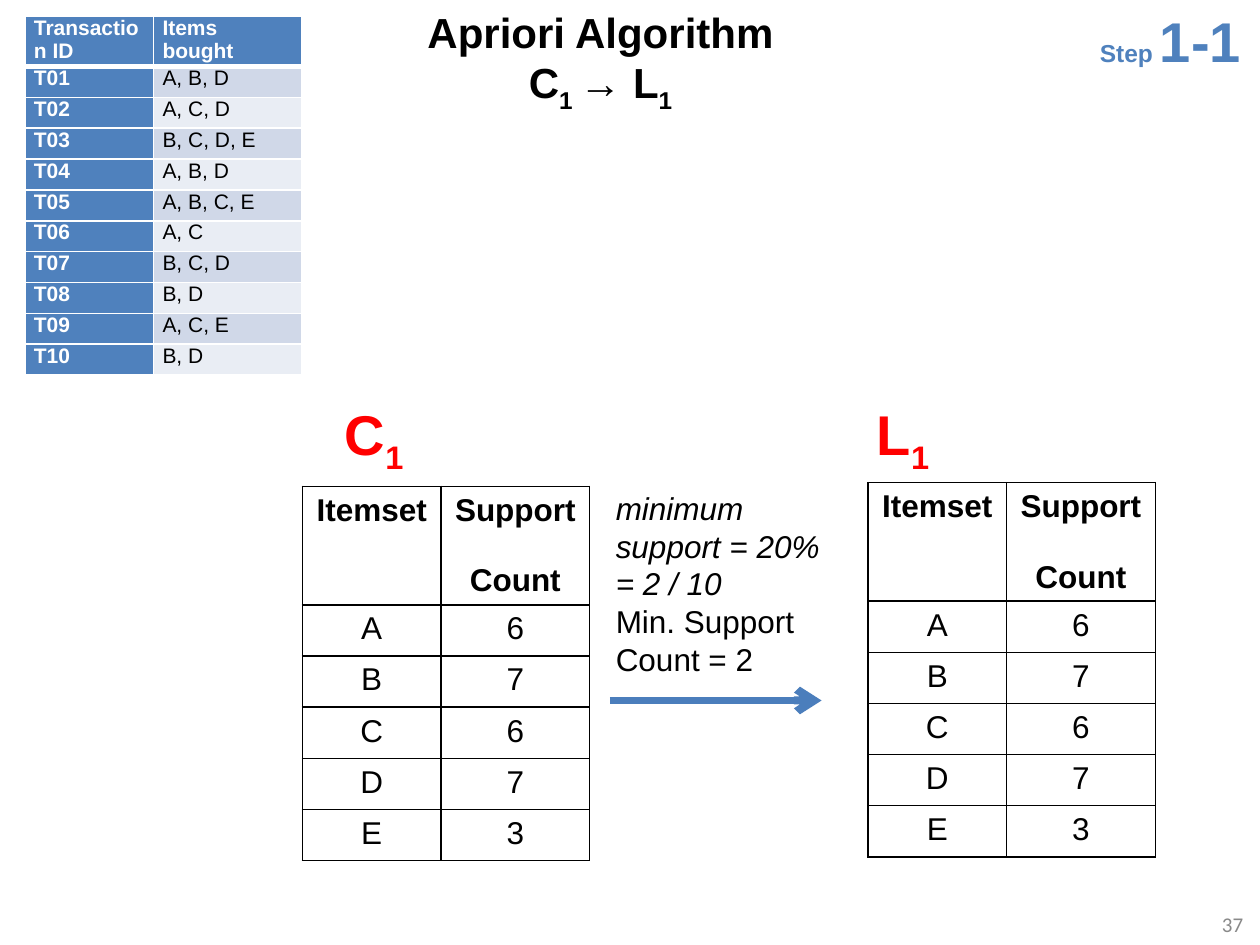
import pptx
import pptx.dml.color
import pptx.enum.shapes
import pptx.enum.text
import pptx.oxml
import pptx.oxml.ns
import pptx.util

Pt = pptx.util.Pt
ALIGN = pptx.enum.text.PP_ALIGN
ANCHOR = pptx.enum.text.MSO_ANCHOR
AUTO_SIZE = pptx.enum.text.MSO_AUTO_SIZE
BLUE, RED, BLACK, WHITE = "4F81BD", "FF0000", "000000", "FFFFFF"
BANDS = ["D0D8E8", "E9EDF4"]

TRANSACTIONS = ["A, B, D", "A, C, D", "B, C, D, E", "A, B, D", "A, B, C, E",
                "A, C", "B, C, D", "B, D", "A, C, E", "B, D"]
SUPPORT_COUNTS = {"A": 6, "B": 7, "C": 6, "D": 7, "E": 3}


def color(value):
    return pptx.dml.color.RGBColor.from_string(value)


def style_paragraph(paragraph, size, font_color, bold=False, align=ALIGN.LEFT, font="Arial"):
    paragraph.alignment = align
    paragraph.font.name = font
    paragraph.font.size = Pt(size)
    paragraph.font.bold = bold
    paragraph.font.color.rgb = color(font_color)


def add_run(paragraph, text, size=None, subscript=False):
    run = paragraph.add_run()
    run.text = text
    if size:
        run.font.size = Pt(size)
    if subscript:
        run._r.get_or_add_rPr().set("baseline", "-25000")


def add_text_frame(slide, box, wrap=False):
    shape = slide.shapes.add_textbox(*map(Pt, box))
    frame = shape.text_frame
    frame.word_wrap = wrap
    frame.auto_size = AUTO_SIZE.SHAPE_TO_FIT_TEXT
    return frame


def set_borders(cell, line_color, top=1, bottom=1):
    properties = cell._tc.get_or_add_tcPr()
    for side, width in (("L", 1), ("R", 1), ("T", top), ("B", bottom)):
        properties.append(pptx.oxml.parse_xml(
            f'<a:ln{side} {pptx.oxml.ns.nsdecls("a")} w="{Pt(width)}"><a:solidFill>'
            f'<a:srgbClr val="{line_color}"/></a:solidFill></a:ln{side}>'))


def add_plain_table(slide, box, rows, column_widths, header_height):
    """Add a filled-in table whose body rows share the height below the header."""
    frame = slide.shapes.add_table(len(rows), len(column_widths), *map(Pt, box))
    table = frame.table
    table.horz_banding = False
    for column, width in zip(table.columns, column_widths):
        column.width = Pt(width)
    body_height = (box[3] - header_height) / (len(rows) - 1)
    for index, (row, values) in enumerate(zip(table.rows, rows)):
        row.height = Pt(body_height if index else header_height)
        for cell, value in zip(row.cells, values):
            cell.text_frame.paragraphs[0].text = str(value)
    return table


def add_transaction_table(slide, box):
    rows = [("Transaction ID", "Items bought")]
    rows += [(f"T{number:02}", items) for number, items in enumerate(TRANSACTIONS, 1)]
    table = add_plain_table(slide, box, rows, [73.5, 85], 28.8)
    for row_index, row in enumerate(table.rows):
        for column_index, cell in enumerate(row.cells):
            heading = row_index == 0 or column_index == 0
            cell.margin_left = cell.margin_right = Pt(5.2)
            cell.margin_top = cell.margin_bottom = 0
            style_paragraph(cell.text_frame.paragraphs[0], 12,
                            WHITE if heading else BLACK, bold=heading)
            # The thick rule runs between the header and the first body row
            set_borders(cell, WHITE, top=3 if row_index == 1 else 1,
                        bottom=3 if row_index == 0 else 1)
            cell.fill.solid()
            cell.fill.fore_color.rgb = color(BLUE if heading else BANDS[(row_index - 1) % 2])


def add_itemset_table(slide, box):
    rows = [("Itemset", "Support \vCount"), *SUPPORT_COUNTS.items()]
    table = add_plain_table(slide, box, rows, [79.2, 85], 50.4)
    for row_index, row in enumerate(table.rows):
        for cell in row.cells:
            style_paragraph(cell.text_frame.paragraphs[0], 18, BLACK,
                            bold=row_index == 0, align=ALIGN.CENTER)
            set_borders(cell, BLACK)
            cell.fill.background()


def add_set_label(slide, box, letter):
    paragraph = add_text_frame(slide, box).paragraphs[0]
    style_paragraph(paragraph, 32, RED, bold=True)
    add_run(paragraph, letter)
    add_run(paragraph, "1", subscript=True)


def add_title(slide, box):
    frame = add_text_frame(slide, box, wrap=True)
    name, step = frame.paragraphs[0], frame.add_paragraph()
    for paragraph in (name, step):
        style_paragraph(paragraph, 24, BLACK, bold=True, align=ALIGN.CENTER)
    add_run(name, "Apriori Algorithm")
    for text, subscript in (("C", False), ("1 ", True), ("→ L", False), ("1", True)):
        add_run(step, text, subscript=subscript)


def add_step_marker(slide, box):
    paragraph = add_text_frame(slide, box).paragraphs[0]
    style_paragraph(paragraph, 14, BLUE, bold=True)
    add_run(paragraph, "Step ")
    add_run(paragraph, "1-1", size=32)


def add_support_note(slide, box):
    frame = add_text_frame(slide, box)
    lines = [("minimum \vsupport = 20%", True), ("= 2 / 10", True),
             ("Min. Support \vCount = 2", False)]
    for index, (text, italic) in enumerate(lines):
        paragraph = frame.add_paragraph() if index else frame.paragraphs[0]
        paragraph.text = text
        style_paragraph(paragraph, 18, BLACK)
        paragraph.font.italic = italic


def add_arrow(slide, left, right, y):
    connector = slide.shapes.add_connector(
        pptx.enum.shapes.MSO_CONNECTOR.STRAIGHT, Pt(left), Pt(y), Pt(right), Pt(y))
    connector.line.width = Pt(4.5)
    connector.line.color.rgb = color("4B7EBC")
    namespace = pptx.oxml.ns.nsdecls("a")
    connector.line._get_or_add_ln().append(
        pptx.oxml.parse_xml(f'<a:tailEnd {namespace} type="arrow"/>'))
    connector._element.spPr.append(pptx.oxml.parse_xml(f"<a:effectLst {namespace}/>"))


def add_page_number(slide, box):
    frame = add_text_frame(slide, box, wrap=True)
    frame.auto_size = AUTO_SIZE.NONE
    frame.vertical_anchor = ANCHOR.MIDDLE
    frame.text = "37"
    style_paragraph(frame.paragraphs[0], 12, "898989", align=ALIGN.RIGHT, font="Calibri")


def main():
    presentation = pptx.Presentation()
    presentation.slide_width, presentation.slide_height = Pt(720), Pt(540)
    slide = presentation.slides.add_slide(presentation.slide_layouts[6])

    # Source data and page number
    add_page_number(slide, (549.5, 513.4, 168, 28.8))
    add_transaction_table(slide, (14.2, 9.2, 158.5, 205.2))

    # Candidate itemsets and frequent itemsets
    add_itemset_table(slide, (172.8, 278, 164.2, 196.6))
    add_itemset_table(slide, (496, 275.8, 164.2, 196.6))
    add_set_label(slide, (190, 224.6, 49.7, 46), "C")
    add_set_label(slide, (494, 224.6, 46, 46), "L")

    # Pruning step between the two tables
    add_support_note(slide, (344.8, 275.8, 132.5, 116.6))
    add_arrow(slide, 348.5, 469.5, 400.3)

    # Heading
    add_title(slide, (224, 0, 238.3, 65.5))
    add_step_marker(slide, (621.4, 0, 95.8, 46))

    presentation.save("out.pptx")


if __name__ == "__main__":
    main()
